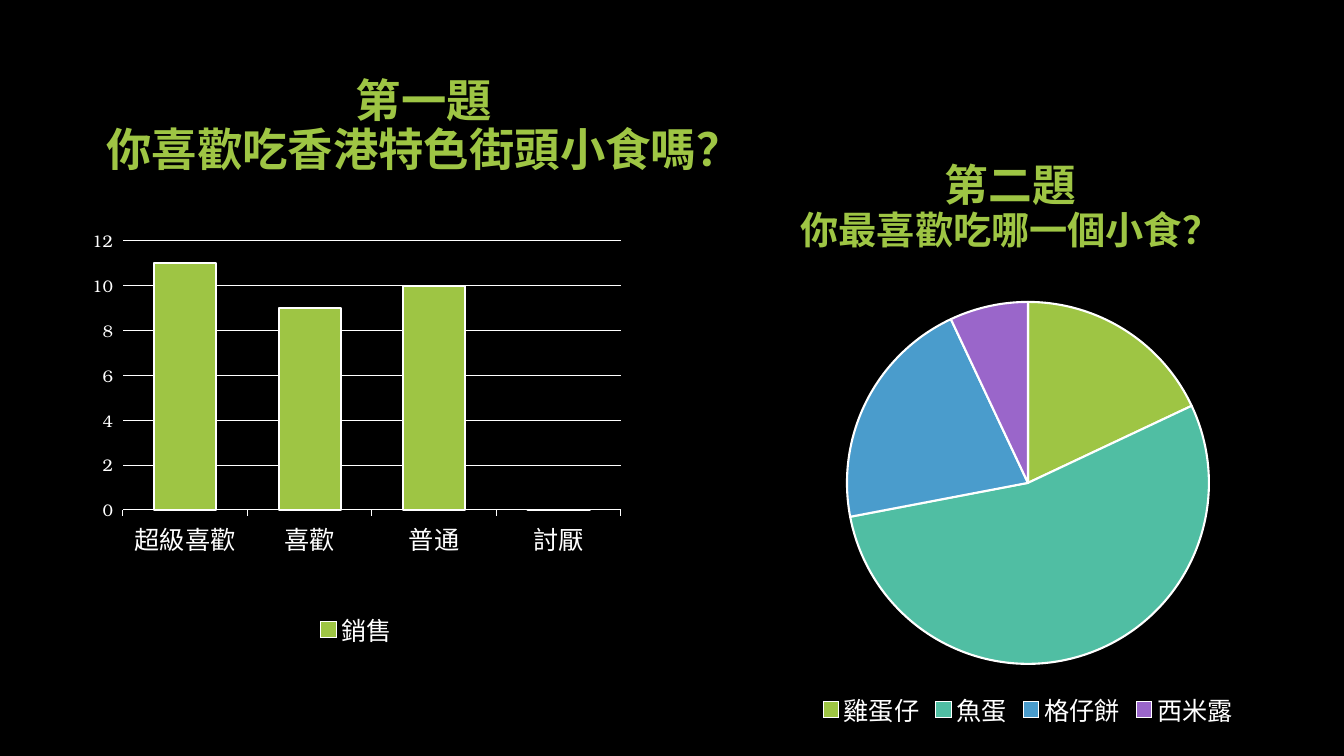
import lxml.etree
import pptx
import pptx.chart.data
import pptx.dml.color
import pptx.enum.chart
import pptx.enum.text
import pptx.oxml.ns
import pptx.util

RGBColor = pptx.dml.color.RGBColor
BLACK = RGBColor(0x00, 0x00, 0x00)
WHITE = RGBColor(0xFF, 0xFF, 0xFF)
LIME = RGBColor(0x9E, 0xC5, 0x44)
TEAL = RGBColor(0x50, 0xBE, 0xA3)
BLUE = RGBColor(0x4A, 0x9C, 0xCC)
PURPLE = RGBColor(0x9A, 0x66, 0xCA)
XL_CHART_TYPE = pptx.enum.chart.XL_CHART_TYPE


def px(length):
    return round(length * 914400 / 100.8)


class SurveyPage:
    """Holds the survey style and the page being filled."""

    font_name = "TeX Gyre Bonum"

    def __init__(self, deck):
        self.page = deck.slides.add_slide(deck.slide_layouts[6])
        self.page.background.fill.solid()
        self.page.background.fill.fore_color.rgb = BLACK

    def style(self, font, size, color=WHITE):
        font.name = self.font_name
        font.size = pptx.util.Pt(size)
        font.color.rgb = color

    def outline(self, line, width):
        line.color.rgb = WHITE
        line.width = pptx.util.Pt(width)

    def heading(self, area, lines):
        box = self.page.shapes.add_textbox(*map(px, area))
        frame = box.text_frame
        frame.word_wrap = True
        frame.vertical_anchor = pptx.enum.text.MSO_ANCHOR.MIDDLE
        for index, (text, size) in enumerate(lines):
            para = frame.add_paragraph() if index else frame.paragraphs[0]
            para.alignment = pptx.enum.text.PP_ALIGN.CENTER
            para.line_spacing = 0.9
            span = para.add_run()
            span.text = text
            span.font.bold = True
            self.style(span.font, size, LIME)

    def chart(self, kind, area, plot_area, name, counts, colors):
        data = pptx.chart.data.CategoryChartData()
        data.categories = list(counts)
        data.add_series(name, list(counts.values()))
        chart = self.page.shapes.add_chart(kind, *map(px, area), data).chart
        self.style(chart.font, 10)
        chart.has_title = False
        chart.has_legend = True
        chart.legend.position = pptx.enum.chart.XL_LEGEND_POSITION.BOTTOM
        chart.legend.include_in_layout = False
        self.style(chart.legend.font, 18)
        self.place_plot(chart, area, plot_area)
        series = chart.plots[0].series[0]
        for index, color in enumerate(colors):
            point = series.points[index].format
            point.fill.solid()
            point.fill.fore_color.rgb = color
            self.outline(point.line, 1.5)
        return chart

    def place_plot(self, chart, area, plot_area):
        qn = pptx.oxml.ns.qn
        plot = chart._chartSpace.chart.plotArea
        for old in plot.findall(qn("c:layout")):
            plot.remove(old)
        layout = lxml.etree.Element(qn("c:layout"))
        manual = lxml.etree.SubElement(layout, qn("c:manualLayout"))
        left, top, width, height = area
        x, y, w, h = plot_area
        settings = {
            "layoutTarget": "inner", "xMode": "edge", "yMode": "edge",
            "x": (x - left) / width, "y": (y - top) / height,
            "w": w / width, "h": h / height,
        }
        for tag, value in settings.items():
            lxml.etree.SubElement(manual, qn("c:" + tag)).set("val", str(value))
        plot.insert(0, layout)

    def columns(self, area, plot_area, name, counts):
        chart = self.chart(XL_CHART_TYPE.COLUMN_CLUSTERED, area, plot_area,
                           name, counts, [LIME] * len(counts))
        plot = chart.plots[0]
        plot.vary_by_categories = False
        plot.gap_width = 100
        bars = plot.series[0].format
        bars.fill.solid()
        bars.fill.fore_color.rgb = LIME
        self.outline(bars.line, 1.5)
        self.style(chart.category_axis.tick_labels.font, 18)
        self.outline(chart.category_axis.format.line, 0.75)
        values = chart.value_axis
        values.minimum_scale, values.maximum_scale = 0, 12
        values.major_unit = 2
        self.style(values.tick_labels.font, 12)
        values.format.line.fill.background()
        self.outline(values.major_gridlines.format.line, 0.75)

    def pie(self, area, plot_area, name, counts, colors):
        chart = self.chart(XL_CHART_TYPE.PIE, area, plot_area,
                           name, counts, colors)
        chart.plots[0].vary_by_categories = True


def main():
    deck = pptx.Presentation()
    deck.slide_width, deck.slide_height = px(1344), px(756)
    survey = SurveyPage(deck)
    survey.heading((0, 19, 848, 216),
                   [("第一題", 32.4), ("你喜歡吃香港特色街頭小食嗎？", 32.4)])
    survey.columns((81, 222, 551, 431), (123, 241, 498, 269), "銷售",
                   {"超級喜歡": 11, "喜歡": 9, "普通": 10, "討厭": 0})
    survey.pie((666, 288, 724, 445), (847, 302, 362, 362), "Series 1",
               {"雞蛋仔": 18, "魚蛋": 54, "格仔餅": 21, "西米露": 7},
               [LIME, TEAL, BLUE, PURPLE])
    survey.heading((632, 105, 757, 207),
                   [("第二題", 31.2), ("你最喜歡吃哪一個小食？", 27.3)])
    deck.save("out.pptx")


if __name__ == "__main__":
    main()
